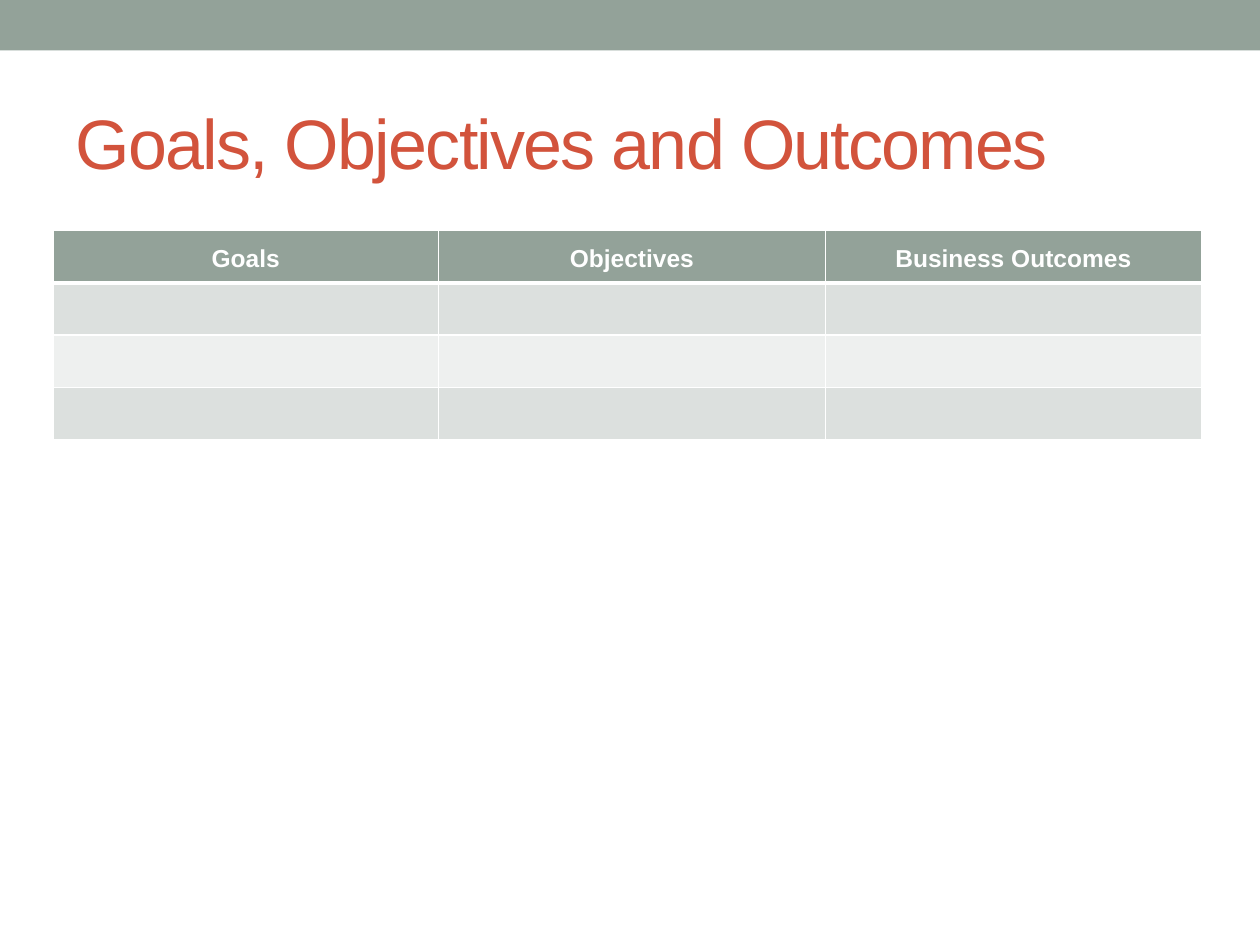
from dataclasses import dataclass

import pptx
import pptx.dml.color
import pptx.enum.shapes
import pptx.enum.text
import pptx.oxml
import pptx.oxml.ns
import pptx.util


@dataclass(frozen=True)
class Theme:
    font: str = "Arial"
    sage: str = "93A299"
    red: str = "D2533C"
    white: str = "FFFFFF"
    bands: tuple = ("DCE0DE", "EEF0EF")
    title_size: int = 40
    table_size: int = 14
    title_spacing: int = -1
    border: int = 1
    header_border: int = 3


class SlideBuilder:
    def __init__(self, presentation, theme):
        self.theme = theme
        self.width = presentation.slide_width
        self.height = presentation.slide_height
        self.slide = presentation.slides.add_slide(presentation.slide_layouts[5])

    def box(self, left, top, width, height):
        return (int(left * self.width), int(top * self.height),
                int(width * self.width), int(height * self.height))

    def color(self, value):
        return pptx.dml.color.RGBColor.from_string(value)

    def style(self, paragraph, size, color, bold=False):
        paragraph.font.name = self.theme.font
        paragraph.font.size = pptx.util.Pt(size)
        paragraph.font.bold = bold
        paragraph.font.color.rgb = self.color(color)

    def band(self, left, top, width, height):
        shape = self.slide.shapes.add_shape(
            pptx.enum.shapes.MSO_SHAPE.RECTANGLE, *self.box(left, top, width, height))
        shape.shadow.inherit = False
        shape.fill.solid()
        shape.fill.fore_color.rgb = self.color(self.theme.sage)
        shape.line.fill.background()

    def title(self, text, left, top, width, height):
        title = self.slide.shapes.title
        title.left, title.top, title.width, title.height = self.box(left, top, width, height)
        frame = title.text_frame
        frame.text = text
        frame.word_wrap = True
        frame.vertical_anchor = pptx.enum.text.MSO_ANCHOR.MIDDLE
        paragraph = frame.paragraphs[0]
        paragraph.alignment = pptx.enum.text.PP_ALIGN.LEFT
        self.style(paragraph, self.theme.title_size, self.theme.red)
        run = paragraph.runs[0]
        run.font._element.set("spc", str(self.theme.title_spacing * 100))

    def borders(self, cell, top, bottom):
        properties = cell._tc.get_or_add_tcPr()
        widths = {"L": self.theme.border, "R": self.theme.border, "T": top, "B": bottom}
        for side, width in widths.items():
            properties.append(pptx.oxml.parse_xml(
                f'<a:ln{side} {pptx.oxml.ns.nsdecls("a")} w="{pptx.util.Pt(width)}">'
                f'<a:solidFill><a:srgbClr val="{self.theme.white}"/></a:solidFill>'
                f'</a:ln{side}>'))

    def header_cell(self, cell, text):
        cell.text = text
        cell.vertical_anchor = pptx.enum.text.MSO_ANCHOR.MIDDLE
        cell.margin_left = cell.margin_right = pptx.util.Inches(0.07)
        cell.margin_top = cell.margin_bottom = 0
        paragraph = cell.text_frame.paragraphs[0]
        paragraph.alignment = pptx.enum.text.PP_ALIGN.CENTER
        paragraph.line_spacing = 1.15
        self.style(paragraph, self.theme.table_size, self.theme.white, True)

    def table(self, headers, body_rows, column_shares, left, top, width, height):
        frame = self.slide.shapes.add_table(
            body_rows + 1, len(headers), *self.box(left, top, width, height))
        table = frame.table
        total = sum(column_shares)
        for column, share in zip(table.columns, column_shares):
            column.width = int(frame.width * share / total)
        for row_index, row in enumerate(table.rows):
            is_header = row_index == 0
            fill = self.theme.sage if is_header else self.theme.bands[(row_index - 1) % 2]
            top_border = self.theme.header_border if row_index == 1 else self.theme.border
            bottom_border = self.theme.header_border if is_header else self.theme.border
            for cell, header in zip(row.cells, headers):
                self.borders(cell, top_border, bottom_border)
                cell.fill.solid()
                cell.fill.fore_color.rgb = self.color(fill)
                if is_header:
                    self.header_cell(cell, header)
                else:
                    self.style(cell.text_frame.paragraphs[0],
                               self.theme.table_size, self.theme.sage)


def main():
    presentation = pptx.Presentation()
    presentation.slide_width = pptx.util.Inches(10)
    presentation.slide_height = pptx.util.Inches(7.5)
    builder = SlideBuilder(presentation, Theme())
    builder.band(0, 0, 1, 0.4 / 7.5)
    builder.title("Goals, Objectives and Outcomes", 0.05, 0.58 / 7.5, 0.9, 1.08 / 7.5)
    builder.table(("Goals", "Objectives", "Business Outcomes"), 3, (3.06, 3.06, 2.96),
                  0.042, 1.83 / 7.5, 0.908, 1.66 / 7.5)
    presentation.save("out.pptx")


if __name__ == "__main__":
    main()
